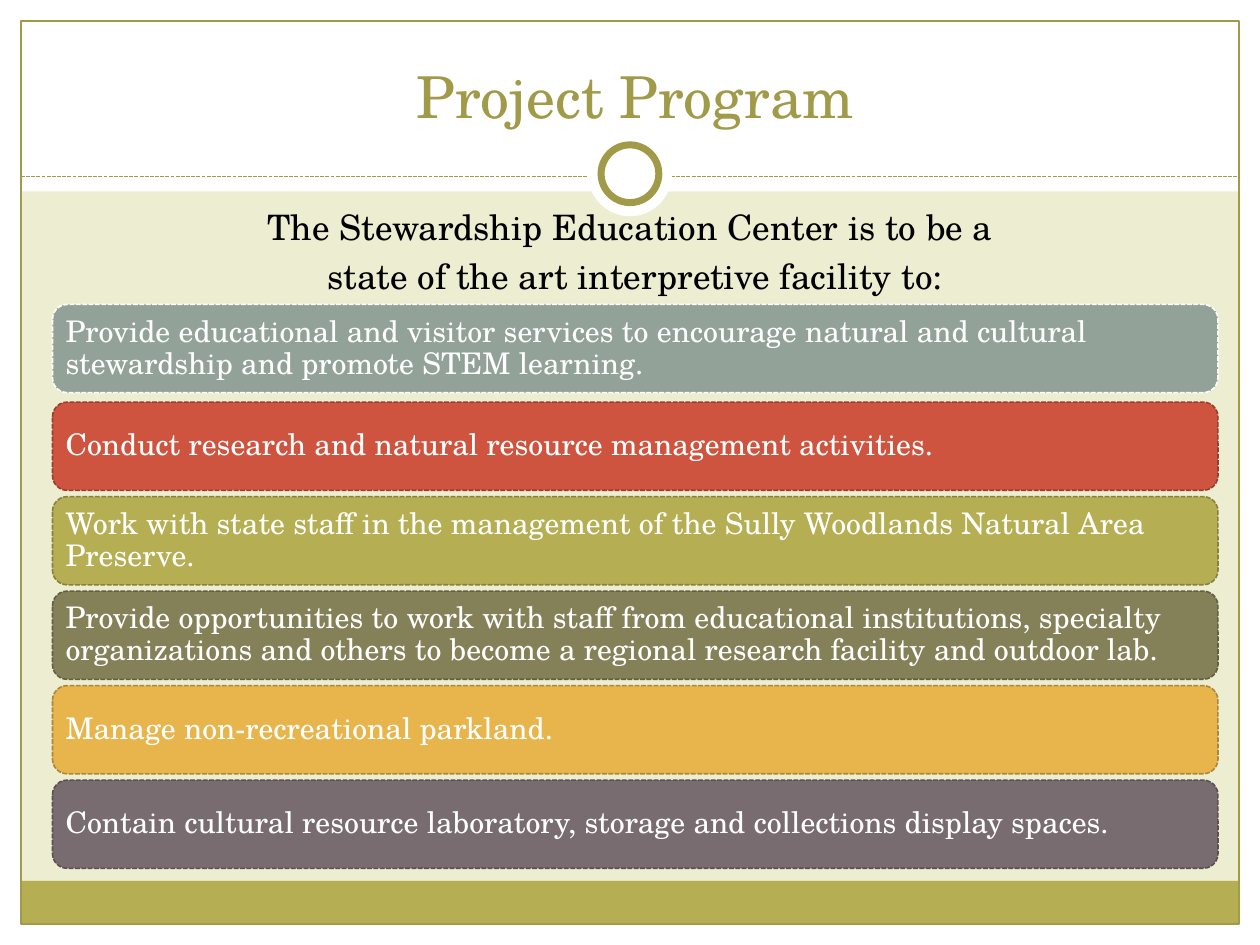
from dataclasses import dataclass

from lxml import etree
from pptx import Presentation
from pptx.dml.color import RGBColor
from pptx.enum.dml import MSO_LINE
from pptx.enum.shapes import MSO_CONNECTOR, MSO_SHAPE
from pptx.enum.text import MSO_ANCHOR, MSO_AUTO_SIZE, PP_ALIGN
from pptx.oxml.ns import qn
from pptx.util import Inches, Pt

RECT, OVAL, ROUNDED = MSO_SHAPE.RECTANGLE, MSO_SHAPE.OVAL, MSO_SHAPE.ROUNDED_RECTANGLE
STRAIGHT = MSO_CONNECTOR.STRAIGHT
DASH = MSO_LINE.SQUARE_DOT
LEFT, CENTER = PP_ALIGN.LEFT, PP_ALIGN.CENTER
TOP, MIDDLE, BOTTOM = MSO_ANCHOR.TOP, MSO_ANCHOR.MIDDLE, MSO_ANCHOR.BOTTOM
NO_FIT = MSO_AUTO_SIZE.NONE

COLUMNS, ROWS = 120, 90


@dataclass(frozen=True)
class Theme:
    """Colours, typeface and type sizes of the deck."""
    font: str = "TeX Gyre Schola"
    background: str = "ECEDD1"
    paper: str = "FFFFFF"
    ink: str = "000000"
    accent: str = "A09A49"
    band: str = "B5AE53"
    title_size: int = 33
    lead_size: int = 20
    goal_size: int = 17
    hairline: float = 0.75
    goal_line: float = 0.9
    ring_line: float = 4


GOALS = [
    ("Provide educational and visitor services to encourage natural and cultural "
     "stewardship and promote STEM learning.", "93A299", "FFFFFF"),
    ("Conduct research and natural resource management activities.", "CF543F", "993E2F"),
    ("Work with state staff in the management of the Sully Woodlands Natural Area "
     "Preserve.", "B5AE53", "86813D"),
    ("Provide opportunities to work with staff from educational institutions, specialty "
     "organizations and others to become a regional research facility and outdoor lab.",
     "848058", "625F41"),
    ("Manage non-recreational parkland.", "E8B54D", "AC8639"),
    ("Contain cultural resource laboratory, storage and collections display spaces.",
     "786C71", "595054"),
]
LEAD = ["The Stewardship Education Center is to be a ",
        "state of the art interpretive facility to:"]


class Canvas:
    """Draws themed elements on the current slide, measured in grid cells."""

    def __init__(self, deck, theme):
        """Add a title-only slide with the theme background."""
        self.theme = theme
        self.column = deck.slide_width / COLUMNS
        self.row = deck.slide_height / ROWS
        self.slide = deck.slides.add_slide(deck.slide_layouts[5])
        self.shapes = self.slide.shapes
        backdrop = self.slide.background.fill
        backdrop.solid()
        backdrop.fore_color.rgb = RGBColor.from_string(theme.background)

    def place(self, left, top, width, height):
        """Turn grid cells into slide lengths."""
        return (round(left * self.column), round(top * self.row),
                round(width * self.column), round(height * self.row))

    def stroke(self, line, color, weight, dash=None):
        """Style a line or an outline."""
        line.color.rgb = RGBColor.from_string(color)
        line.width = Pt(weight)
        if dash:
            line.dash_style = dash

    def panel(self, kind, cells, fill=None, line=None, weight=None, dash=None):
        """Add a preset shape with optional fill and outline."""
        panel = self.shapes.add_shape(kind, *self.place(*cells))
        panel.shadow.inherit = False
        if fill:
            panel.fill.solid()
            panel.fill.fore_color.rgb = RGBColor.from_string(fill)
        else:
            panel.fill.background()
        if line:
            self.stroke(panel.line, line, weight, dash)
        else:
            panel.line.fill.background()
        return panel

    def rule(self, left, right, row):
        """Add a dashed horizontal rule."""
        start_x, y, end_x, _ = self.place(left, row, right, 0)
        rule = self.shapes.add_connector(STRAIGHT, start_x, y, end_x, y)
        self.stroke(rule.line, self.theme.accent, self.theme.hairline, DASH)
        etree.SubElement(rule._element.spPr, qn("a:effectLst"))

    def set_text(self, frame, lines, size, color, align, anchor, leading=None, gap=0):
        """Fill a text frame with one run per paragraph."""
        frame.word_wrap = True
        frame.auto_size = NO_FIT
        frame.vertical_anchor = anchor
        for index, line in enumerate(lines):
            paragraph = frame.add_paragraph() if index else frame.paragraphs[0]
            paragraph.alignment = align
            paragraph.space_before = Pt(gap if index else 0)
            if leading:
                paragraph.line_spacing = leading
            run = paragraph.add_run()
            run.text = line
            run.font.name = self.theme.font
            run.font.size = Pt(size)
            run.font.color.rgb = RGBColor.from_string(color)

    def title(self, cells, text):
        """Format the title placeholder and bring it to the front."""
        title = self.shapes.title
        title.left, title.top, title.width, title.height = self.place(*cells)
        self.set_text(title.text_frame, [text], self.theme.title_size,
                      self.theme.accent, CENTER, BOTTOM)
        self.shapes._spTree.append(title._element)

    def lead(self, cells, lines):
        """Add the centred introduction."""
        lead = self.shapes.add_textbox(*self.place(*cells))
        self.set_text(lead.text_frame, lines, self.theme.lead_size,
                      self.theme.ink, CENTER, TOP, gap=4)

    def goal(self, cells, text, fill, line):
        """Add one rounded goal bar."""
        goal = self.panel(ROUNDED, cells, fill, line, self.theme.goal_line, DASH)
        frame = goal.text_frame
        frame.margin_left = frame.margin_right = Inches(0.07)
        frame.margin_top = frame.margin_bottom = Inches(0.07)
        self.set_text(frame, [text], self.theme.goal_size, self.theme.paper,
                      LEFT, MIDDLE, leading=0.9)


def main():
    """Build and save the slide."""
    theme = Theme()
    deck = Presentation()
    deck.slide_width, deck.slide_height = Inches(10), Inches(7.5)
    canvas = Canvas(deck, theme)

    for border in ((0, 88, 120, 2), (0, 0, 120, 18.24), (0, 0, 2, 90), (118, 0, 2, 90)):
        canvas.panel(RECT, border, theme.paper)
    canvas.panel(RECT, (2, 83.9, 116, 4.1), theme.band)
    canvas.panel(RECT, (2, 2, 116, 86), line=theme.accent, weight=theme.hairline)
    canvas.rule(2, 118, 16.8)
    canvas.panel(OVAL, (56, 12.6, 8, 8), theme.paper)
    canvas.panel(OVAL, (57.25, 13.8, 5.5, 5.5), theme.paper, theme.accent, theme.ring_line)

    canvas.title((17, 3, 87, 10), "Project Program")
    canvas.lead((4, 19, 113, 10), LEAD)
    for index, (text, fill, line) in enumerate(GOALS):
        top = 29.3 + 9 * index if index else 29
        canvas.goal((5, top, 111, 8.4), text, fill, line)

    deck.save("out.pptx")


if __name__ == "__main__":
    main()
